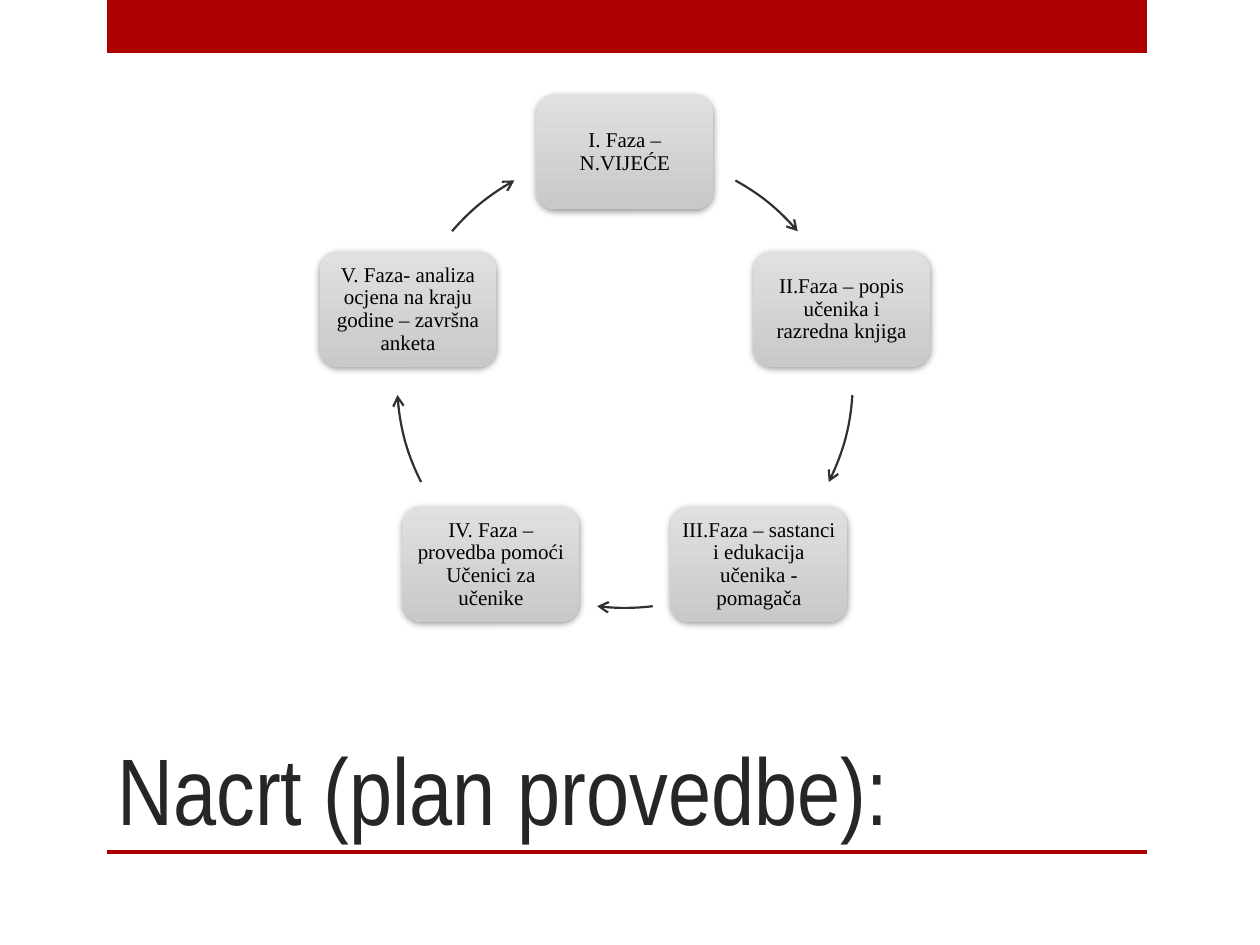
import math

import pptx
import pptx.dml.color
import pptx.enum.shapes
import pptx.enum.text
import pptx.oxml
import pptx.oxml.ns
import pptx.util

EMU_PER_PX = 914400 / 126
SHAPES = pptx.enum.shapes.MSO_SHAPE
ANCHORS = pptx.enum.text.MSO_ANCHOR
ACCENT = "AD0101"
PHASES = [
    "I. Faza – N.VIJEĆE",
    "II.Faza – popis učenika i razredna knjiga",
    "III.Faza – sastanci i edukacija učenika - pomagača",
    "IV. Faza – provedba pomoći Učenici za učenike",
    "V. Faza- analiza ocjena na kraju godine – završna anketa",
]
# Start and end of each arrow, in degrees clockwise from the top of the ring
ARROW_ANGLES = [(29, 49.3), (93.8, 116.6), (173, 187), (243.4, 266.2), (310.7, 331)]


def px(length):
    return pptx.util.Emu(round(length * EMU_PER_PX))


def color(hex_value):
    return pptx.dml.color.RGBColor.from_string(hex_value)


def add_shape(slide, kind, left, top, width, height):
    """Add a preset shape without shadow, fill or outline."""
    shape = slide.shapes.add_shape(kind, px(left), px(top), px(width), px(height))
    shape.shadow.inherit = False
    shape.fill.background()
    shape.line.fill.background()
    return shape


def set_text(shape, text, font_name, size, hex_value):
    shape.text_frame.word_wrap = True
    paragraph = shape.text_frame.paragraphs[0]
    paragraph.text = text
    font = paragraph.runs[0].font
    font.name = font_name
    font.size = pptx.util.Pt(size)
    font.color.rgb = color(hex_value)
    return paragraph


def add_soft_shadow(shape):
    effects = shape._element.spPr.find(pptx.oxml.ns.qn("a:effectLst"))
    effects.append(pptx.oxml.parse_xml(
        f'<a:outerShdw {pptx.oxml.ns.nsdecls("a")} blurRad="50800" dist="12700" '
        'dir="5280000" rotWithShape="0"><a:srgbClr val="000000">'
        '<a:alpha val="40000"/></a:srgbClr></a:outerShdw>'))


def add_band(slide, left, top, width, height):
    band = add_shape(slide, SHAPES.RECTANGLE, left, top, width, height)
    band.fill.solid()
    band.fill.fore_color.rgb = color(ACCENT)


def add_title(slide, text, left, top, width, height):
    title = slide.shapes.add_textbox(px(left), px(top), px(width), px(height))
    title.text_frame.vertical_anchor = ANCHORS.BOTTOM
    set_text(title, text, "Arial Narrow", 54, "262626")


def add_phase(slide, text, left, top, width, height):
    phase = add_shape(slide, SHAPES.ROUNDED_RECTANGLE, left, top, width, height)
    phase.fill.gradient()
    phase.fill.gradient_angle = 270
    for stop, hex_value in zip(phase.fill.gradient_stops, ("E0E0E0", "C9C9C9")):
        stop.color.rgb = color(hex_value)
    add_soft_shadow(phase)
    frame = phase.text_frame
    frame.margin_left = frame.margin_right = px(6)
    frame.margin_top = frame.margin_bottom = px(6)
    frame.vertical_anchor = ANCHORS.MIDDLE
    paragraph = set_text(phase, text, "Times New Roman", 12, "000000")
    paragraph.alignment = pptx.enum.text.PP_ALIGN.CENTER
    paragraph.line_spacing = 0.9


def add_arc_arrow(slide, start, end, left, top, diameter):
    arc = add_shape(slide, SHAPES.ARC, left, top, diameter, diameter)
    for index, angle in enumerate((start, end)):
        # Preset angles run from three o'clock, in 60000ths of a degree
        arc.adjustments[index] = (angle - 90) % 360 * 0.6
    arc.line.color.rgb = color("303030")
    arc.line.width = pptx.util.Pt(1.25)
    arc.line._get_or_add_ln().append(pptx.oxml.parse_xml(
        f'<a:tailEnd {pptx.oxml.ns.nsdecls("a")} type="arrow"/>'))


def add_cycle(slide, left, top, diameter):
    """Place the phases evenly around a ring, with an arrow after each."""
    node_width, node_height = 177, 115
    radius = diameter / 2
    for index, (text, angles) in enumerate(zip(PHASES, ARROW_ANGLES)):
        turn = math.tau * index / len(PHASES)
        center_x = left + radius + radius * math.sin(turn)
        center_y = top + radius - radius * math.cos(turn)
        add_phase(slide, text, center_x - node_width / 2,
                  center_y - node_height / 2, node_width, node_height)
        add_arc_arrow(slide, *angles, left, top, diameter)


def main():
    presentation = pptx.Presentation()
    presentation.slide_width = px(1260)
    presentation.slide_height = px(945)
    slide = presentation.slides.add_slide(presentation.slide_layouts[6])
    add_band(slide, 107, 0, 1040, 53)
    add_band(slide, 107, 850, 1040, 4)
    add_title(slide, "Nacrt (plan provedbe):", 105, 630, 935, 221)
    add_cycle(slide, 397, 152, 456)
    presentation.save("out.pptx")


if __name__ == "__main__":
    main()
